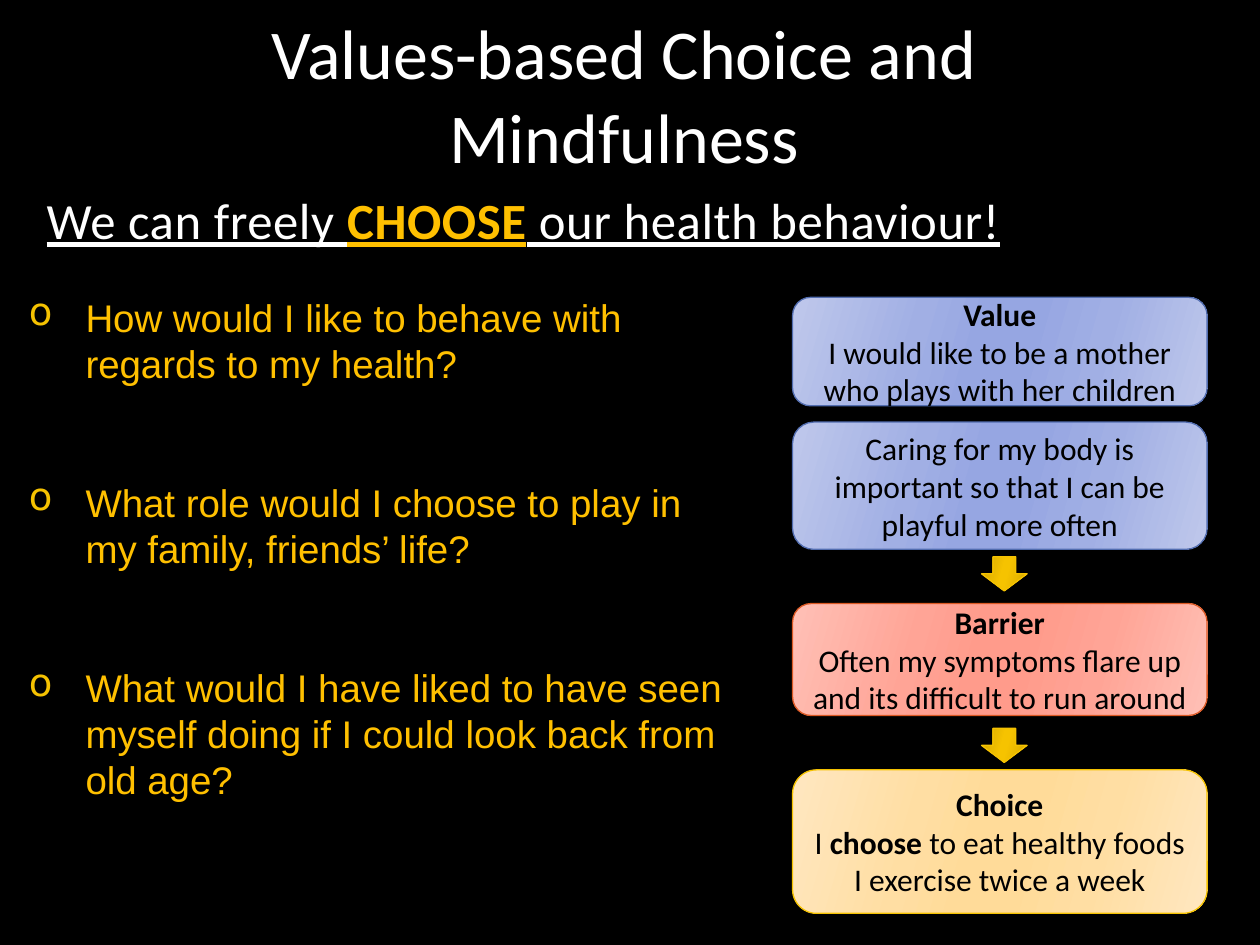
from lxml.etree import SubElement
from pptx import Presentation
from pptx.dml.color import RGBColor
from pptx.enum.shapes import MSO_SHAPE as Preset
from pptx.enum.text import MSO_ANCHOR as Anchor, MSO_AUTO_SIZE as AutoSize, PP_ALIGN as Align
from pptx.oxml.ns import qn
from pptx.util import Pt

BLACK = RGBColor(0x00, 0x00, 0x00)
WHITE = RGBColor(0xFF, 0xFF, 0xFF)
AMBER = RGBColor(0xFF, 0xC0, 0x00)
GOLD = RGBColor(0xF5, 0xC2, 0x01)
BLUE_LINE = RGBColor(0x52, 0x6D, 0xB0)
RED_LINE = RGBColor(0xDC, 0x59, 0x24)

# Gradients run edge - inner - centre and back again
BLUE = [RGBColor.from_string(c) for c in ("BFC8EB", "A1AFE4", "96A6E2")]
RED = [RGBColor.from_string(c) for c in ("FFC0B6", "FFA496", "FF9B8B")]
YELLOW = [RGBColor.from_string(c) for c in ("FFE7C0", "FFDEA3", "FFDB99")]
ARROW = [RGBColor.from_string(c) for c in ("C89F01", "EBBA00", "F6C300")]
STOPS = (0, 30, 45, 55, 73, 100)


def place(part, box):
    part.left, part.top, part.width, part.height = (Pt(v) for v in box)


def write(paragraph, text, font="Calibri", size=18, color=BLACK, bold=False,
          underline=None, spacing=None):
    run = paragraph.add_run()
    run.text = text
    run.font.name = font
    run.font.size = Pt(size)
    run.font.color.rgb = color
    run.font.bold = bold
    run.font.underline = underline
    if spacing:
        run.font._element.set("spc", str(int(spacing * 100)))


def set_bullet(paragraph, char=None, color=None, indent=0):
    props = paragraph._p.get_or_add_pPr()
    props.set("marL", str(Pt(indent)))
    props.set("indent", str(-Pt(indent)))
    if char is None:
        SubElement(props, qn("a:buNone"))
        return
    SubElement(SubElement(props, qn("a:buClr")), qn("a:srgbClr")).set("val", str(color))
    SubElement(props, qn("a:buChar")).set("char", char)


def set_gradient(shape, shades):
    shape.fill.gradient()
    shape.fill.gradient_angle = 344
    stop_list = shape._element.spPr.find(".//" + qn("a:gsLst"))
    for stop in list(stop_list):
        stop_list.remove(stop)
    for position, shade in zip(STOPS, shades + shades[::-1]):
        stop = SubElement(stop_list, qn("a:gs"))
        stop.set("pos", str(position * 1000))
        SubElement(stop, qn("a:srgbClr")).set("val", str(shade))


def add_block(slide, preset, box, shades, line):
    block = slide.shapes.add_shape(preset, *(Pt(v) for v in box))
    block.shadow.inherit = False
    set_gradient(block, shades)
    block.line.color.rgb = line
    block.line.width = Pt(0.75)
    return block


def add_title(slide, box):
    title = slide.shapes.title
    place(title, box)
    frame = title.text_frame
    frame.auto_size = AutoSize.NONE
    frame.vertical_anchor = Anchor.BOTTOM
    heading = frame.paragraphs[0]
    heading.alignment = Align.CENTER
    write(heading, "Values-based Choice and Mindfulness", size=40, color=WHITE)


def add_statement(slide, box):
    statement = slide.placeholders[1]
    place(statement, box)
    frame = statement.text_frame
    frame.auto_size = AutoSize.NONE
    sentence = frame.paragraphs[0]
    sentence.space_before = Pt(12)
    set_bullet(sentence)
    for text, color, bold in (("We can freely ", WHITE, False), ("CHOOSE", AMBER, True),
                              (" our health behaviour!", WHITE, False)):
        write(sentence, text, size=29, color=color, bold=bold, underline=True, spacing=0.3)


def add_questions(slide, box):
    frame = slide.shapes.add_textbox(*(Pt(v) for v in box)).text_frame
    frame.word_wrap = True
    questions = ("How would I like to behave with regards to my health?",
                 "What role would I choose to play in my family, friends’ life?",
                 "What would I have liked to have seen myself doing if I could "
                 "look back from old age?")
    for number, text in enumerate(questions):
        question = frame.add_paragraph() if number else frame.paragraphs[0]
        question.line_spacing = Pt(26.4)
        question.space_before = Pt(53 if number else 0)
        set_bullet(question, "o", GOLD, indent=32.4)
        write(question, text, font="Arial", size=22, color=AMBER)


def add_flow(slide, box):
    left, top, width, _ = box
    # Offset from the top, height, shades, line, paragraphs of (text, bold) runs
    steps = (
        (0, 62, BLUE, BLUE_LINE,
         [[("Value", True)],
          [("I would like to be a mother who plays with her children", False)]]),
        (71.3, 72.7, BLUE, BLUE_LINE,
         [[("Caring for my body is important so that I can be playful more often", False)]]),
        (175, 64, RED, RED_LINE,
         [[("Barrier", True)],
          [("Often my symptoms flare up and its difficult to run around", False)]]),
        (270, 82, YELLOW, GOLD,
         [[("Choice", True)],
          [("I ", False), ("choose", True), (" to eat healthy foods", False)],
          [("I exercise twice a week", False)]]),
    )
    for offset, height, shades, line, paragraphs in steps:
        step = add_block(slide, Preset.ROUNDED_RECTANGLE,
                         (left, top + offset, width, height), shades, line)
        frame = step.text_frame
        frame.word_wrap = True
        frame.vertical_anchor = Anchor.MIDDLE
        for number, runs in enumerate(paragraphs):
            paragraph = frame.add_paragraph() if number else frame.paragraphs[0]
            paragraph.alignment = Align.CENTER
            for text, bold in runs:
                write(paragraph, text, bold=bold)

    # Arrows into the barrier and the choice
    for offset in (148.3, 246.3):
        add_block(slide, Preset.DOWN_ARROW, (left + 108, top + offset, 26, 19.5), ARROW, GOLD)


def main():
    deck = Presentation()
    deck.slide_width, deck.slide_height = Pt(720), Pt(540)
    slide = deck.slides.add_slide(deck.slide_layouts[1])
    slide.background.fill.solid()
    slide.background.fill.fore_color.rgb = BLACK

    add_title(slide, (54, 21, 605, 84))
    add_statement(slide, (19.4, 104.4, 700.6, 46))
    add_questions(slide, (9.4, 164.2, 417.6, 322))
    add_flow(slide, (452.9, 169.9, 236.9, 352))
    deck.save("out.pptx")


if __name__ == "__main__":
    main()
